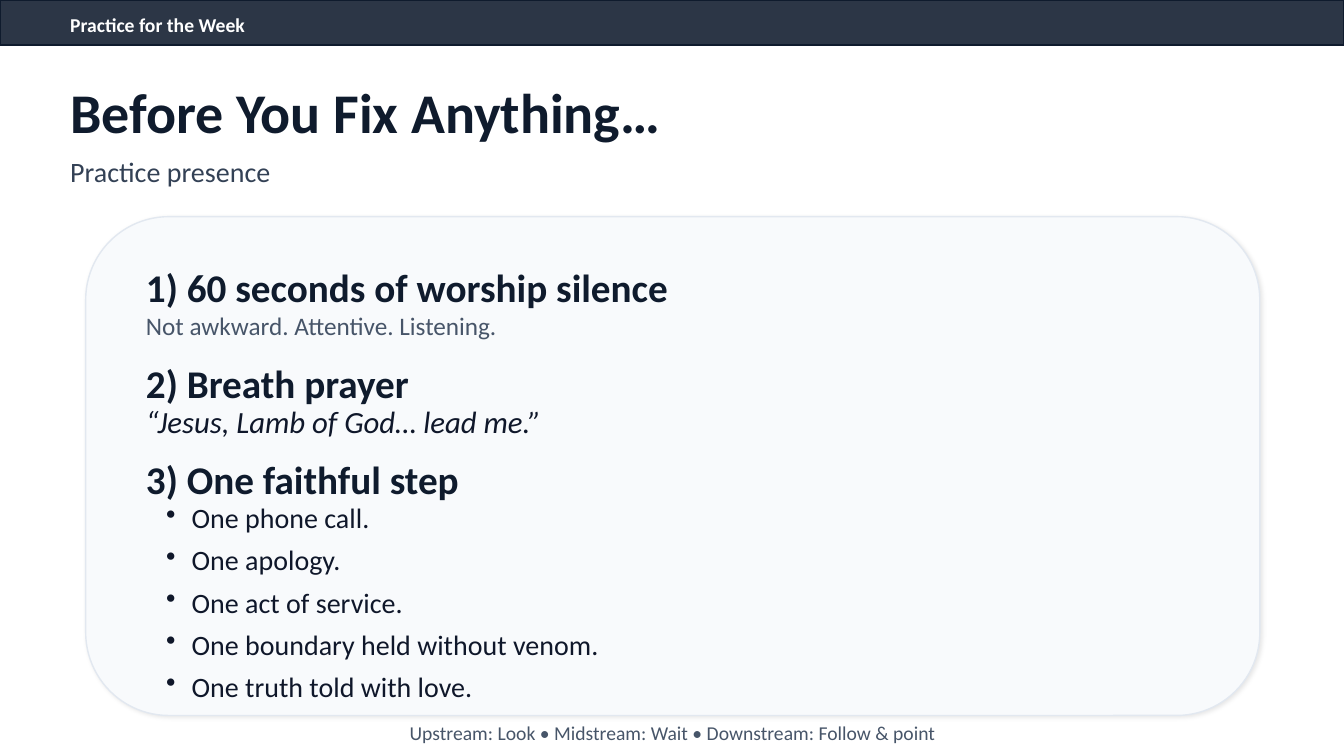
from dataclasses import dataclass

from lxml import etree
from pptx import Presentation
from pptx.dml.color import RGBColor
from pptx.enum.shapes import MSO_SHAPE
from pptx.enum.text import MSO_ANCHOR, PP_ALIGN
from pptx.oxml.ns import qn
from pptx.shapes.autoshape import Shape
from pptx.slide import Slide
from pptx.text.text import _Paragraph
from pptx.util import Cm, Pt

RECTANGLE = MSO_SHAPE.RECTANGLE
ROUNDED = MSO_SHAPE.ROUNDED_RECTANGLE
MIDDLE = MSO_ANCHOR.MIDDLE
LEFT = PP_ALIGN.LEFT
CENTER = PP_ALIGN.CENTER

FONT = "Calibri"
COLORS = {
    "navy": "0F1B2D",
    "ink": "0F172A",
    "subtitle": "334155",
    "muted": "475569",
    "card": "F8FAFC",
    "border": "E2E8F0",
    "white": "FFFFFF",
    "shadow": "000000",
}

SLIDE_WIDTH, SLIDE_HEIGHT = 33.87, 19.05
MARGIN = 1.52
CARD_LEFT, CARD_TOP, CARD_WIDTH, CARD_HEIGHT = 2.16, 5.46, 29.59, 12.57
STEP_LEFT, STEP_TOP, STEP_WIDTH = 3.43, 6.73, 26.92
STEP_PITCH = 2.41
HEADING_HEIGHT, DETAIL_HEIGHT = 1.02, 0.89
BULLET_INDENT = 0.64


@dataclass(frozen=True)
class Box:
    """A rectangle in centimetres."""
    left: float
    top: float
    width: float
    height: float

    def lengths(self) -> tuple[Cm, Cm, Cm, Cm]:
        return Cm(self.left), Cm(self.top), Cm(self.width), Cm(self.height)


@dataclass(frozen=True)
class Style:
    size: int
    color: str
    bold: bool = False
    italic: bool = False
    alignment: PP_ALIGN = LEFT
    bulleted: bool = False


@dataclass(frozen=True)
class TextBlock:
    box: Box
    style: Style
    lines: tuple[str, ...]


@dataclass(frozen=True)
class Step:
    heading: str
    detail: str = ""
    detail_style: Style = Style(18, "muted")


HEADING = Style(28, "navy", bold=True)

TEXT_BLOCKS = (
    TextBlock(Box(MARGIN, 0.23, 30.99, 0.76), Style(14, "white", bold=True),
              ("Practice for the Week",)),
    TextBlock(Box(MARGIN, 1.78, 30.73, 2.03), Style(40, "navy", bold=True),
              ("Before You Fix Anything…",)),
    TextBlock(Box(MARGIN, 3.68, 30.73, 1.27), Style(20, "subtitle"),
              ("Practice presence",)),
    TextBlock(Box(3.94, 12.75, 26.42, 4.83), Style(20, "ink", bulleted=True),
              ("One phone call.", "One apology.", "One act of service.",
               "One boundary held without venom.", "One truth told with love.")),
    TextBlock(Box(CARD_LEFT, CARD_TOP + CARD_HEIGHT, CARD_WIDTH, DETAIL_HEIGHT),
              Style(14, "muted", alignment=CENTER),
              ("Upstream: Look • Midstream: Wait • Downstream: Follow & point",)),
)

STEPS = (
    Step("1) 60 seconds of worship silence", "Not awkward. Attentive. Listening."),
    Step("2) Breath prayer", "“Jesus, Lamb of God… lead me.”",
         Style(22, "ink", italic=True)),
    Step("3) One faithful step"),
)


def color(name: str) -> RGBColor:
    return RGBColor.from_string(COLORS[name])


def add_panel(slide: Slide, kind: MSO_SHAPE, box: Box, fill: str, line: str) -> Shape:
    shape = slide.shapes.add_shape(kind, *box.lengths())
    shape.shadow.inherit = False
    shape.fill.solid()
    shape.fill.fore_color.rgb = color(fill)
    shape.line.color.rgb = color(line)
    shape.line.width = Pt(1)
    return shape


def set_opacity(color_element: etree._Element, percent: int) -> None:
    etree.SubElement(color_element, qn("a:alpha"), val=str(percent * 1000))


def add_soft_shadow(shape: Shape) -> None:
    effects = shape._element.spPr.find(qn("a:effectLst"))
    shadow = etree.SubElement(
        effects, qn("a:outerShdw"), blurRad=str(Pt(3)), dist=str(Pt(1.5)),
        dir=str(45 * 60000), algn="bl", rotWithShape="0")
    tint = etree.SubElement(shadow, qn("a:srgbClr"), val=COLORS["shadow"])
    set_opacity(tint, 10)


def add_bullet(paragraph: _Paragraph) -> None:
    properties = paragraph._p.get_or_add_pPr()
    properties.set("marL", str(Cm(BULLET_INDENT)))
    properties.set("indent", str(-Cm(BULLET_INDENT)))
    etree.SubElement(properties, qn("a:buChar"), char="•")
    paragraph.space_after = Pt(6)


def add_text(slide: Slide, block: TextBlock) -> None:
    frame = slide.shapes.add_textbox(*block.box.lengths()).text_frame
    frame.word_wrap = True
    frame.vertical_anchor = MIDDLE
    style = block.style
    for index, line in enumerate(block.lines):
        paragraph = frame.add_paragraph() if index else frame.paragraphs[0]
        paragraph.alignment = style.alignment
        if style.bulleted:
            add_bullet(paragraph)
        run = paragraph.add_run()
        run.text = line
        run.font.name = FONT
        run.font.size = Pt(style.size)
        run.font.bold = style.bold
        run.font.italic = style.italic
        run.font.color.rgb = color(style.color)


def add_step(slide: Slide, step: Step, top: float) -> None:
    heading_box = Box(STEP_LEFT, top, STEP_WIDTH, HEADING_HEIGHT)
    add_text(slide, TextBlock(heading_box, HEADING, (step.heading,)))
    if step.detail:
        detail_box = Box(STEP_LEFT, top + HEADING_HEIGHT, STEP_WIDTH, DETAIL_HEIGHT)
        add_text(slide, TextBlock(detail_box, step.detail_style, (step.detail,)))


def main() -> None:
    presentation = Presentation()
    presentation.slide_width = Cm(SLIDE_WIDTH)
    presentation.slide_height = Cm(SLIDE_HEIGHT)
    slide = presentation.slides.add_slide(presentation.slide_layouts[6])

    banner = add_panel(slide, RECTANGLE, Box(0, 0, SLIDE_WIDTH, 1.14), "navy", "navy")
    set_opacity(banner._element.spPr.find(qn("a:solidFill"))[0], 88)
    card_box = Box(CARD_LEFT, CARD_TOP, CARD_WIDTH, CARD_HEIGHT)
    add_soft_shadow(add_panel(slide, ROUNDED, card_box, "card", "border"))

    for index, step in enumerate(STEPS):
        add_step(slide, step, STEP_TOP + index * STEP_PITCH)
    for block in TEXT_BLOCKS:
        add_text(slide, block)

    presentation.save("out.pptx")


if __name__ == "__main__":
    main()
